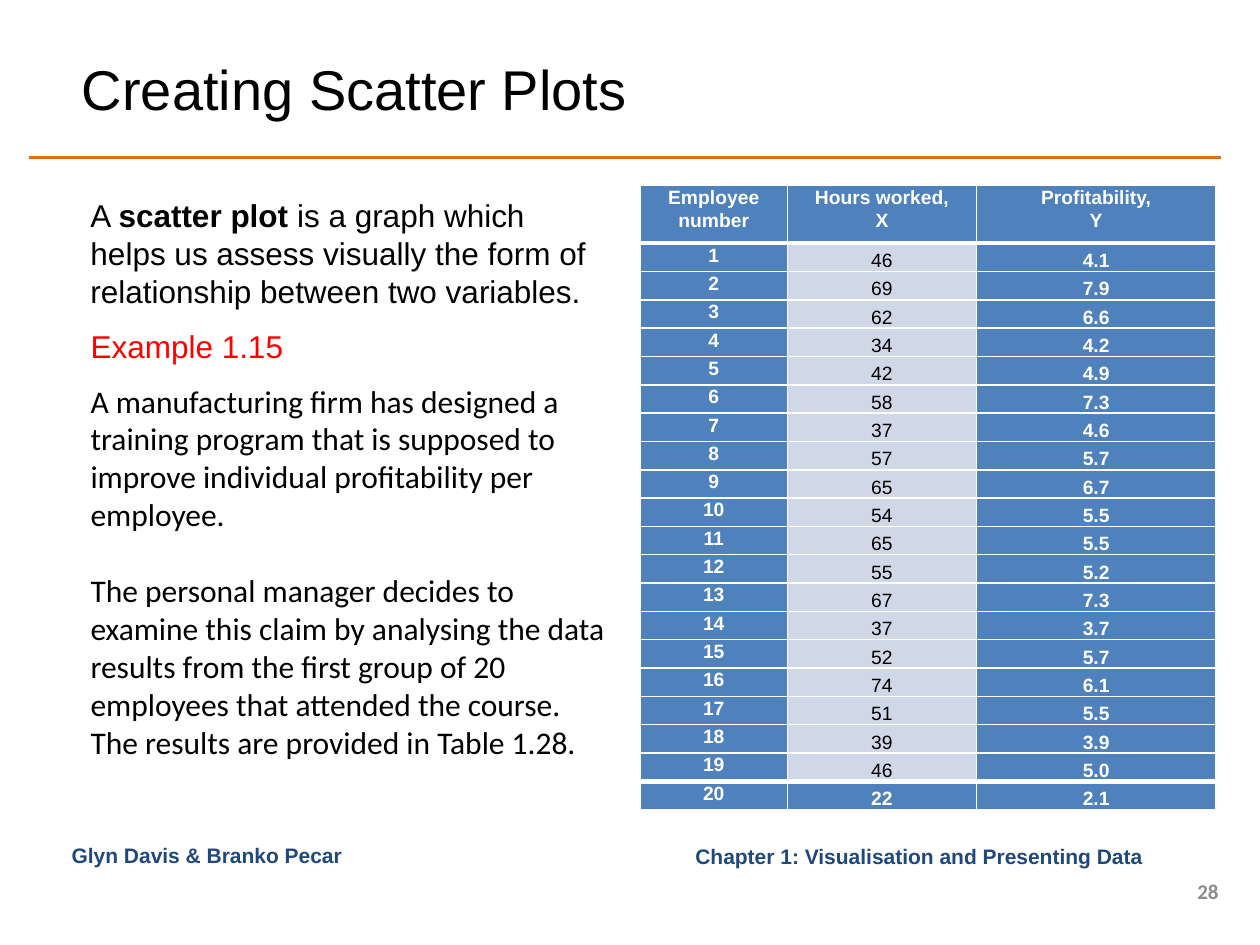
"""Build the scatter plot slide with its employee profitability table."""
import pptx
import pptx.dml.color
import pptx.enum.shapes
import pptx.enum.text
import pptx.oxml.ns
import pptx.util
from lxml import etree
from pptx.util import Inches

ALIGN = pptx.enum.text.PP_ALIGN
ANCHOR = pptx.enum.text.MSO_ANCHOR
COLOURS = {
    "rule": "E46C0A",
    "footer": "1F497D",
    "number": "8C8C8C",
    "black": "000000",
    "example": "FF0000",
    "white": "FFFFFF",
    "header": "4F81BD",
    "hours": "D0D8E8",
}
HEADINGS = ["Employee\nnumber", "Hours worked,\nX", "Profitability,\nY"]
HOURS = [46, 69, 62, 34, 42, 58, 37, 57, 65, 54,
         65, 55, 67, 37, 52, 74, 51, 39, 46, 22]
PROFITABILITY = [4.1, 7.9, 6.6, 4.2, 4.9, 7.3, 4.6, 5.7, 6.7, 5.5,
                 5.5, 5.2, 7.3, 3.7, 5.7, 6.1, 5.5, 3.9, 5.0, 2.1]
COLUMN_WIDTHS = [1.17, 1.5, 1.9]
HEADER_HEIGHT = 0.46
TABLE_HEIGHT = 4.96


def rgb(name):
    return pptx.dml.color.RGBColor.from_string(COLOURS[name])


def format_text(frame, size, colour, font="Arial", bold=False, align=ALIGN.LEFT):
    for paragraph in frame.paragraphs:
        paragraph.alignment = align
        for run in paragraph.runs:
            run.font.size = pptx.util.Pt(size)
            run.font.name = font
            run.font.bold = bold
            run.font.color.rgb = rgb(colour)


def add_text(slide, place, text, size, colour, anchor=ANCHOR.TOP, **style):
    frame = slide.shapes.add_textbox(*map(Inches, place)).text_frame
    frame.word_wrap = True
    frame.vertical_anchor = anchor
    frame.text = text
    format_text(frame, size, colour, **style)
    return frame


def add_title(slide, text):
    title = slide.shapes.title
    title.left, title.top = Inches(0.55), Inches(0.31)
    title.width, title.height = Inches(7.58), Inches(0.78)
    title.text_frame.text = text
    title.text_frame.vertical_anchor = ANCHOR.MIDDLE
    format_text(title.text_frame, 32, "black")


def add_rule(slide):
    rule = slide.shapes.add_connector(
        pptx.enum.shapes.MSO_CONNECTOR.STRAIGHT,
        Inches(0.23), Inches(1.25), Inches(9.69), Inches(1.25))
    rule.line.color.rgb = rgb("rule")
    rule.line.width = pptx.util.Pt(2)
    properties = rule.element.find(pptx.oxml.ns.qn("p:spPr"))
    etree.SubElement(properties, pptx.oxml.ns.qn("a:effectLst"))


def add_definition(slide):
    definition = add_text(slide, (0.62, 1.51, 4.3, 1.01), "A ", 18, "black")
    sentence = definition.paragraphs[0]
    sentence.add_run().text = "scatter plot"
    sentence.add_run().text = (" is a graph which helps us assess visually the form "
                               "of relationship between two variables.")
    format_text(definition, 18, "black")
    sentence.runs[1].font.bold = True


def add_example(slide):
    add_text(slide, (0.62, 2.55, 2.02, 0.4), "Example 1.15", 18, "example")
    story = add_text(
        slide, (0.62, 2.98, 4.28, 3.13),
        "A manufacturing firm has designed a training program that is supposed to "
        "improve individual profitability per employee.\n"
        "The personal manager decides to examine this claim by analysing the data "
        "results from the first group of 20 employees that attended the course. "
        "The results are provided in Table 1.28.",
        18, "black", font="Calibri")
    story.paragraphs[1].space_before = pptx.util.Pt(22)


def set_borders(cell, top, bottom):
    properties = cell._tc.get_or_add_tcPr()
    for side, points in (("L", 1), ("R", 1), ("T", top), ("B", bottom)):
        border = etree.SubElement(properties, pptx.oxml.ns.qn(f"a:ln{side}"),
                                  w=str(pptx.util.Pt(points)))
        fill = etree.SubElement(border, pptx.oxml.ns.qn("a:solidFill"))
        etree.SubElement(fill, pptx.oxml.ns.qn("a:srgbClr"), val=COLOURS["white"])


def fill_cell(cell, text, plain, anchor, top, bottom):
    set_borders(cell, top, bottom)
    cell.fill.solid()
    cell.fill.fore_color.rgb = rgb("hours" if plain else "header")
    cell.margin_left = cell.margin_right = Inches(0.07)
    cell.margin_top = cell.margin_bottom = 0
    cell.vertical_anchor = anchor
    cell.text_frame.text = text
    format_text(cell.text_frame, 11, "black" if plain else "white",
                bold=not plain, align=ALIGN.CENTER)
    for paragraph in cell.text_frame.paragraphs:
        paragraph.line_spacing = 1.07


def add_employee_table(slide):
    records = [HEADINGS] + [
        [str(number), str(hours), f"{profit:.1f}"]
        for number, (hours, profit) in enumerate(zip(HOURS, PROFITABILITY), 1)]
    last = len(records) - 1
    employees = slide.shapes.add_table(
        len(records), len(HEADINGS), Inches(5.08), Inches(1.47),
        Inches(sum(COLUMN_WIDTHS)), Inches(TABLE_HEIGHT)).table
    employees.first_row = employees.horz_banding = False
    for column, width in zip(employees.columns, COLUMN_WIDTHS):
        column.width = Inches(width)
    for index, record in enumerate(records):
        employees.rows[index].height = Inches(
            (TABLE_HEIGHT - HEADER_HEIGHT) / last if index else HEADER_HEIGHT)
        for position, text in enumerate(record):
            fill_cell(
                employees.cell(index, position), text,
                plain=position == 1 and 0 < index < last,
                anchor=ANCHOR.BOTTOM if index and position else ANCHOR.TOP,
                top=3 if index in (1, last) else 1,
                bottom=3 if index in (0, last - 1) else 1)


def add_footer(slide):
    add_text(slide, (0.47, 6.64, 2.97, 0.31), "Glyn Davis & Branko Pecar",
             12, "footer", bold=True)
    add_text(slide, (4.69, 6.64, 4.48, 0.31),
             "Chapter 1: Visualisation and Presenting Data", 12, "footer",
             anchor=ANCHOR.MIDDLE, bold=True, align=ALIGN.RIGHT)
    add_text(slide, (9.3, 6.95, 0.47, 0.24), "28", 12, "number",
             anchor=ANCHOR.MIDDLE, font="Calibri", bold=True, align=ALIGN.RIGHT)


def main():
    deck = pptx.Presentation()
    deck.slide_width, deck.slide_height = Inches(10), Inches(7.5)
    slide = deck.slides.add_slide(deck.slide_layouts[5])
    add_rule(slide)
    add_title(slide, "Creating Scatter Plots")
    add_definition(slide)
    add_example(slide)
    add_employee_table(slide)
    add_footer(slide)
    deck.save("out.pptx")


if __name__ == "__main__":
    main()
